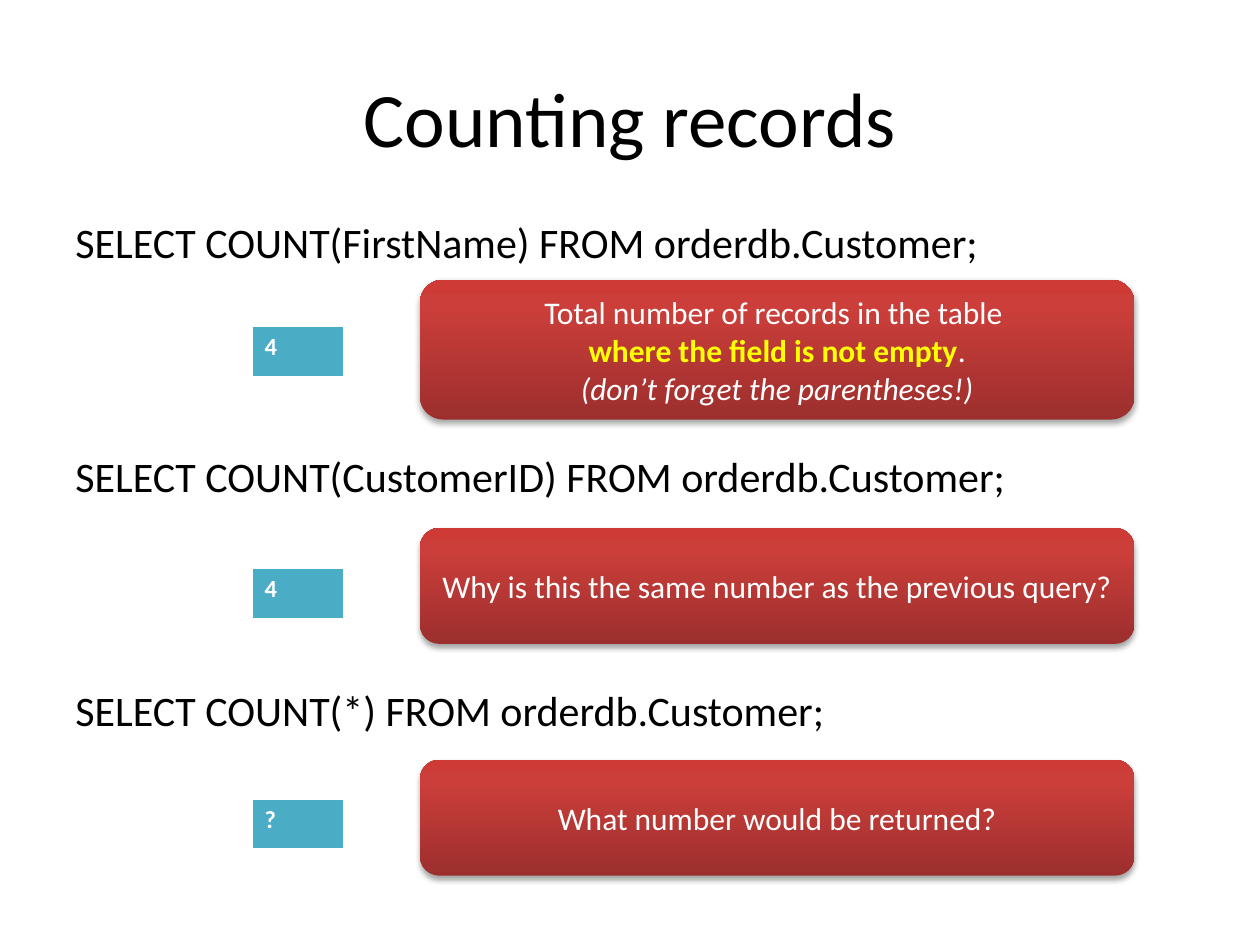
from copy import deepcopy

from lxml import etree
from pptx import Presentation
from pptx import util as u
from pptx.dml.color import RGBColor
from pptx.enum import shapes, text
from pptx.oxml import parse_xml
from pptx.oxml.ns import nsdecls, qn

W, H = 10, 7.5
MARGIN = 0.05 * W
RESULT_X, RESULT_W, RESULT_H = 0.2 * W, 0.73, 0.41
NOTE_X, NOTE_W = W / 3, 5.67
FONT = "Calibri"
COLORS = {
    "ink": "000000",
    "paper": "FFFFFF",
    "accent": "FFFF00",
    "result": "4BACC6",
    "note_dark": "9C2F2D",
    "note_mid": "CB3E3A",
    "note_light": "CE3B37",
}
NOTE_STOPS = [(0, "note_dark"), (0.8, "note_mid"), (1, "note_light")]

QUERIES = [
    "SELECT COUNT(FirstName) FROM orderdb.Customer;",
    "SELECT COUNT(CustomerID) FROM orderdb.Customer;",
    "SELECT COUNT(*) FROM orderdb.Customer;",
]
# Result value, result top, note top, note height, note paragraphs
ANSWERS = [
    ("4", 2.59, 2.22, 1.11, [
        [("Total number of records in the table \n", {}),
         ("where the field is not empty", {"color": "accent", "bold": True}),
         (".", {})],
        [("(don’t forget the parentheses!)", {"italic": True})],
    ]),
    ("4", 4.51, 4.19, 0.92,
     [[("Why is this the same number as the previous query?", {})]]),
    ("?", 6.34, 6.03, 0.92, [[("What number would be returned?", {})]]),
]


def rgb(name):
    return RGBColor.from_string(COLORS[name])


def box(x, y, w, h):
    return [u.Inches(v) for v in (x, y, w, h)]


def add_run(p, content, size=18, color="paper", bold=False, italic=False):
    """Add a formatted run; a trailing newline becomes a line break."""
    r = p.add_run()
    r.text = content.rstrip("\n")
    f = r.font
    f.name, f.size, f.bold, f.italic = FONT, u.Pt(size), bold, italic
    f.color.rgb = rgb(color)
    if content.endswith("\n"):
        p.add_line_break()


def write(tf, paragraphs, align=text.PP_ALIGN.LEFT,
          anchor=text.MSO_ANCHOR.TOP, gap=0, **fmt):
    """Fill a text frame with paragraphs, each a list of (text, format)."""
    tf.word_wrap = True
    tf.vertical_anchor = anchor
    for i, runs in enumerate(paragraphs):
        p = tf.add_paragraph() if i else tf.paragraphs[0]
        p.alignment = align
        p.space_before = u.Pt(gap if i else 0)
        for content, own in runs:
            add_run(p, content, **{**fmt, **own})


def add_text(s, area, lines, **fmt):
    tf = s.shapes.add_textbox(*box(*area)).text_frame
    write(tf, [[(line, {})] for line in lines], **fmt)


def add_result(s, y, value):
    frame = s.shapes.add_table(1, 1, *box(RESULT_X, y, RESULT_W, RESULT_H))
    cell = frame.table.cell(0, 0)
    tc_pr = cell._tc.get_or_add_tcPr()
    for side, width in (("L", 1), ("R", 1), ("T", 1), ("B", 3)):
        tc_pr.append(parse_xml(
            f'<a:ln{side} {nsdecls("a")} w="{u.Pt(width)}"><a:solidFill>'
            f'<a:srgbClr val="{COLORS["paper"]}"/></a:solidFill></a:ln{side}>'))
    cell.fill.solid()
    cell.fill.fore_color.rgb = rgb("result")
    write(cell.text_frame, [[(value, {})]], size=14, bold=True)


def fill_note(sp):
    """Three-stop vertical gradient, darkest at the bottom."""
    sp.fill.gradient()
    sp.fill.gradient_angle = 90
    stops = sp._element.spPr.find(qn("a:gradFill")).find(qn("a:gsLst"))
    stops.append(deepcopy(stops[-1]))
    for stop, (position, color) in zip(sp.fill.gradient_stops, NOTE_STOPS):
        stop.position = position
        stop.color.rgb = rgb(color)


def add_shadow(sp):
    sp.shadow.inherit = False
    effects = sp._element.spPr.find(qn("a:effectLst"))
    shadow = etree.SubElement(
        effects, qn("a:outerShdw"), blurRad=str(u.Pt(3.1)),
        dist=str(u.Pt(1.8)), dir="5400000", rotWithShape="0")
    color = etree.SubElement(shadow, qn("a:srgbClr"), val=COLORS["ink"])
    etree.SubElement(color, qn("a:alpha"), val="35000")


def add_note(s, y, h, paragraphs):
    sp = s.shapes.add_shape(shapes.MSO_SHAPE.ROUNDED_RECTANGLE,
                            *box(NOTE_X, y, NOTE_W, h))
    fill_note(sp)
    sp.line.fill.background()
    add_shadow(sp)
    write(sp.text_frame, paragraphs, align=text.PP_ALIGN.CENTER,
          anchor=text.MSO_ANCHOR.MIDDLE)


def main():
    prs = Presentation()
    prs.slide_width, prs.slide_height = u.Inches(W), u.Inches(H)
    s = prs.slides.add_slide(prs.slide_layouts[6])
    add_text(s, (MARGIN, 0.04 * H, W - 2 * MARGIN, H / 6),
             ["Counting records"], size=44, color="ink",
             align=text.PP_ALIGN.CENTER, anchor=text.MSO_ANCHOR.MIDDLE)
    add_text(s, (MARGIN, 1.67, 9.42, 5.33), QUERIES,
             size=24, color="ink", gap=105)
    for value, result_y, note_y, note_h, paragraphs in ANSWERS:
        add_result(s, result_y, value)
        add_note(s, note_y, note_h, paragraphs)
    prs.save("out.pptx")


if __name__ == "__main__":
    main()
